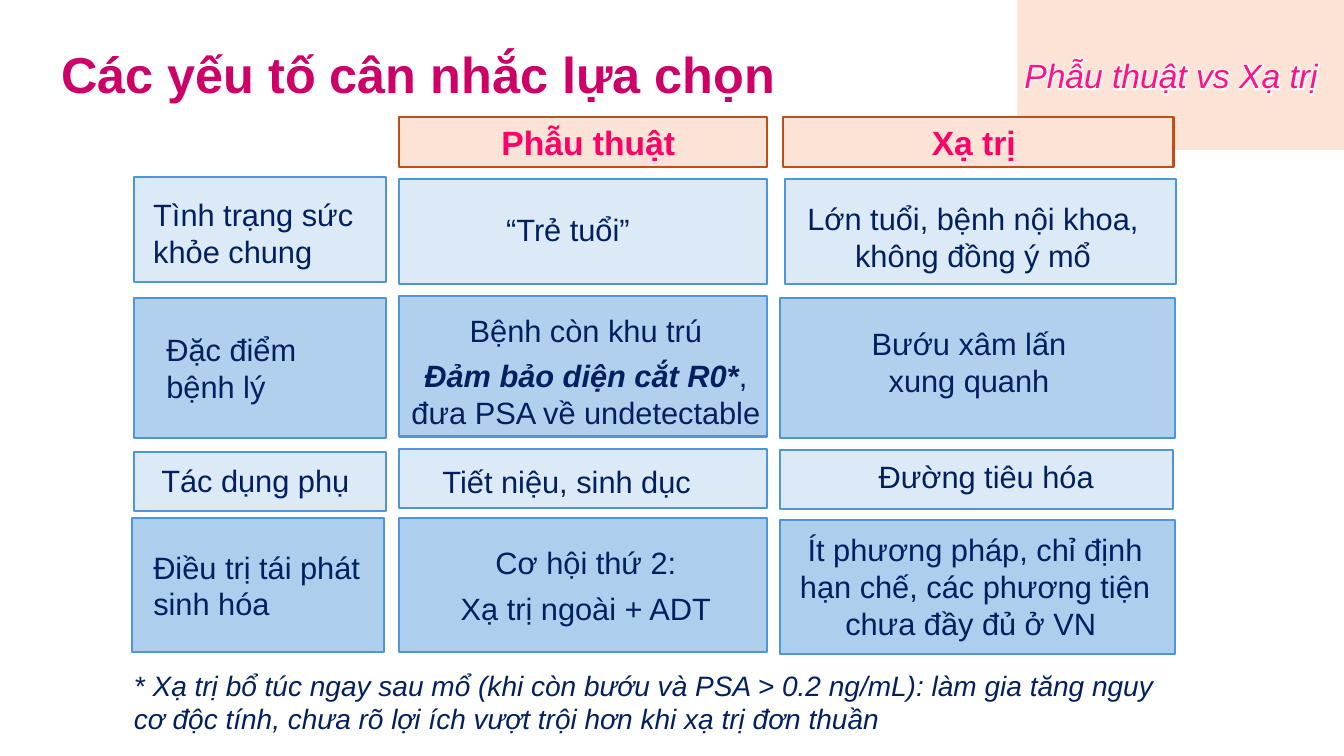
from dataclasses import dataclass

from lxml.etree import SubElement
from pptx import Presentation
from pptx.dml.color import RGBColor
from pptx.enum.shapes import MSO_SHAPE
from pptx.enum.text import MSO_ANCHOR, PP_ALIGN
from pptx.oxml.ns import qn
from pptx.util import Inches, Pt


@dataclass(frozen=True)
class Theme:
    font: str = "Arial"
    title: str = "CC0066"
    tag: str = "FF1188"
    header: str = "FF0066"
    body: str = "002060"
    peach: str = "FBE3D6"
    header_line: str = "C04F15"
    pale: str = "DCEAF7"
    mid: str = "B1D0ED"
    deep: str = "ADCFED"
    cell_line: str = "4E95D9"
    title_size: int = 36
    header_size: int = 24
    cell_size: int = 22
    note_size: int = 20


@dataclass(frozen=True)
class Cell:
    """Text offset is (x, y, width, height) from the cell corner; nudge is (x, y, width)."""
    paragraphs: list
    text_offset: tuple
    nudge: tuple = (0, 0, 0)


THEME = Theme()
INDENT = 0.29
COLUMNS = [(1.33, 2.5), (3.96, 3.65), (7.74, 3.91)]
HEADERS = [((3.96, 1.16, 3.65, 0.5), "Phẫu thuật ", INDENT),
           ((7.77, 1.16, 3.87, 0.5), "Xạ trị ", 0.1)]
# Each row: top, height, fill, cells
ROWS = [
    (1.78, 1.04, THEME.pale, [
        Cell(["Tình trạng sức khỏe chung"], (-0.1, 0.13, 2.5, 0.84), (0, -0.02, 0)),
        Cell(["“Trẻ tuổi” "], (0.37, 0.26, 2.5, 0.47)),
        Cell(["Lớn tuổi, bệnh nội khoa, không đồng ý mổ"],
             (-0.17, 0.15, 3.87, 0.84), (0.05, 0, -0.04)),
    ]),
    (2.96, 1.39, THEME.mid, [
        Cell(["Đặc điểm bệnh lý"], (0.03, 0.27, 2.01, 0.84)),
        Cell(["Bệnh còn khu trú",
              [("Đảm bảo diện cắt R0*", True), (", đưa PSA về undetectable", False)]],
             (-0.27, 0.1, 4.05, 1.3), (0, -0.02, 0)),
        Cell(["Bướu xâm lấn xung quanh"], (0.32, 0.21, 2.91, 0.84)),
    ]),
    (4.46, 0.59, THEME.pale, [
        Cell(["Tác dụng phụ"], (-0.02, 0.05, 2.37, 0.47), (0, 0.02, 0)),
        Cell(["Tiết niệu, sinh dục"], (-0.52, 0.09, 4.17, 0.47), (0, -0.01, 0)),
        Cell(["Đường tiêu hóa"], (-0.14, 0.03, 4.17, 0.47), (0, 0, -0.02)),
    ]),
    (5.14, 1.33, THEME.deep, [
        Cell(["Điều trị tái phát sinh hóa"], (-0.08, 0.25, 2.59, 0.84), (-0.02, 0, 0)),
        Cell(["Cơ hội thứ 2:", "Xạ trị ngoài + ADT"], (0.21, 0.21, 3.09, 0.93)),
        Cell(["Ít phương pháp, chỉ định hạn chế, các phương tiện chưa đầy đủ ở VN "],
             (-0.25, 0.06, 4.17, 1.21), (0, 0.02, 0)),
    ]),
]


def add_panel(page, box, fill, line=None):
    panel = page.shapes.add_shape(MSO_SHAPE.RECTANGLE, *map(Inches, box))
    panel.shadow.inherit = False
    panel.fill.solid()
    panel.fill.fore_color.rgb = RGBColor.from_string(fill)
    if line:
        panel.line.color.rgb = RGBColor.from_string(line)
        panel.line.width = Pt(1.5)
    else:
        panel.line.fill.background()
    return panel


def write(shape, paragraphs, *, size, color, align=PP_ALIGN.LEFT, bold=False,
          italic=False, left=0.1, anchor=MSO_ANCHOR.TOP):
    """A paragraph is a string, or a list of (string, emphasised) pairs."""
    frame = shape.text_frame
    frame.word_wrap = True
    frame.vertical_anchor = anchor
    frame.margin_left = Inches(left)
    for number, content in enumerate(paragraphs):
        para = frame.add_paragraph() if number else frame.paragraphs[0]
        para.alignment = align
        if number:
            para.space_before = Pt(6)
        pieces = [(content, False)] if isinstance(content, str) else content
        for text, emphasised in pieces:
            span = para.add_run()
            span.text = text
            span.font.name = THEME.font
            span.font.size = Pt(size)
            span.font.bold = bold or emphasised
            span.font.italic = italic or emphasised
            span.font.color.rgb = RGBColor.from_string(color)


def add_text(page, box, paragraphs, **style):
    write(page.shapes.add_textbox(*map(Inches, box)), paragraphs, **style)


def add_glow(span):
    """Put a soft white halo behind the letters."""
    properties = span.font._element
    effects = SubElement(properties, qn("a:effectLst"))
    glow = SubElement(effects, qn("a:glow"), rad=str(Pt(5)))
    SubElement(glow, qn("a:srgbClr"), val="FFFFFF")
    properties.find(qn("a:solidFill")).addnext(effects)


def add_topic_tag(page, box):
    tag = add_panel(page, box, THEME.peach)
    write(tag, ["Phẫu thuật vs Xạ trị"], size=THEME.header_size, color=THEME.tag,
          italic=True, left=0.07, anchor=MSO_ANCHOR.MIDDLE)
    tag.text_frame.margin_right = Inches(0.07)
    add_glow(tag.text_frame.paragraphs[0].runs[0])


def add_headers(page):
    for box, text, left in HEADERS:
        header = add_panel(page, box, THEME.peach, THEME.header_line)
        write(header, [text], size=THEME.header_size, color=THEME.header,
              align=PP_ALIGN.CENTER, bold=True, left=left)


def add_comparison(page):
    cells = []
    for top, height, fill, row in ROWS:
        for column, ((left, width), cell) in enumerate(zip(COLUMNS, row)):
            right, down, wider = cell.nudge
            box = (left + right, top + down, width + wider, height)
            add_panel(page, box, fill, THEME.cell_line)
            cells.append((box, column, cell))
    for (left, top, _, _), column, cell in cells:
        right, down, width, height = cell.text_offset
        add_text(page, (left + right, top + down, width, height), cell.paragraphs,
                 size=THEME.cell_size, color=THEME.body, left=INDENT,
                 align=PP_ALIGN.CENTER if column else PP_ALIGN.LEFT)


def main():
    deck = Presentation()
    deck.slide_width, deck.slide_height = Inches(13.33), Inches(7.5)
    page = deck.slides.add_slide(deck.slide_layouts[6])
    add_text(page, (0.2, 0.38, 7.9, 0.68), ["Các yếu tố cân nhắc lựa chọn"],
             size=THEME.title_size, color=THEME.title, bold=True, align=PP_ALIGN.CENTER)
    add_topic_tag(page, (10.09, 0, 3.24, 1.49))
    add_headers(page)
    add_comparison(page)
    add_text(page, (1.23, 6.58, 10.53, 0.77),
             ["* Xạ trị bổ túc ngay sau mổ (khi còn bướu và PSA > 0.2 ng/mL): làm gia tăng "
              "nguy cơ độc tính, chưa rõ lợi ích vượt trội hơn khi xạ trị đơn thuần"],
             size=THEME.note_size, color=THEME.body, italic=True)
    deck.save("out.pptx")


if __name__ == "__main__":
    main()
